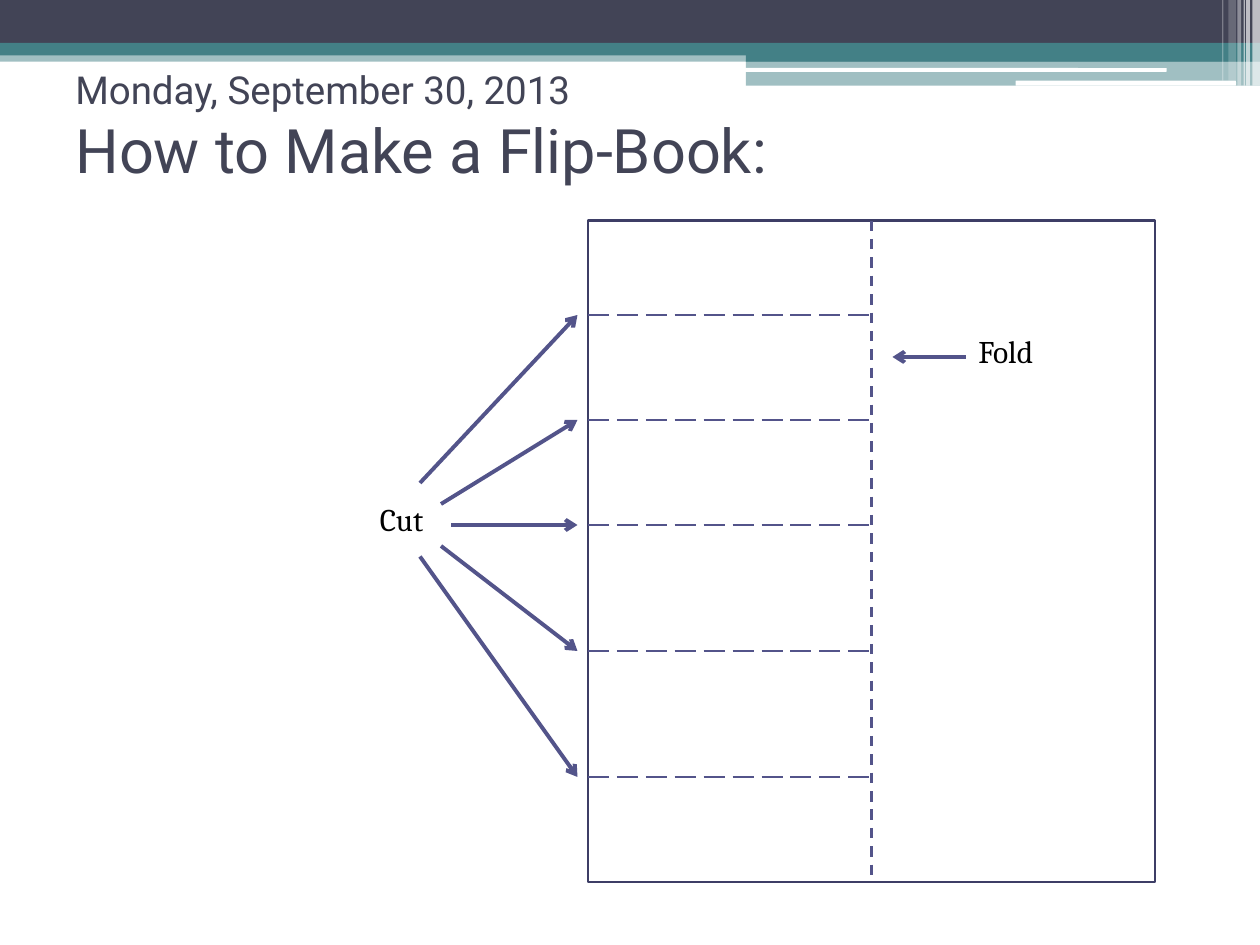
"""Build a slide that shows how to cut and fold a flip-book."""
from dataclasses import dataclass
from typing import Any, Optional

import pptx
import pptx.dml.color
import pptx.enum.dml
import pptx.enum.shapes
import pptx.enum.text
import pptx.oxml
import pptx.oxml.ns
import pptx.util
from lxml import etree

RGBColor = pptx.dml.color.RGBColor
Shape = pptx.enum.shapes.MSO_SHAPE
Dash = pptx.enum.dml.MSO_LINE
Anchor = pptx.enum.text.MSO_ANCHOR

WHITE = RGBColor(0xFF, 0xFF, 0xFF)
BLACK = RGBColor(0x00, 0x00, 0x00)
SLATE = RGBColor(0x42, 0x44, 0x56)
TEAL = RGBColor(0x43, 0x80, 0x86)
INDIGO = RGBColor(0x53, 0x54, 0x8A)
DARK_INDIGO = RGBColor(0x3D, 0x3E, 0x66)

SLIDE_WIDTH = pptx.util.Inches(10)
SLIDE_HEIGHT = pptx.util.Inches(7.5)
CELL = SLIDE_WIDTH // 120
PAGE_LEFT, PAGE_TOP, PAGE_RIGHT, PAGE_BOTTOM = 56, 21, 110, 84
FOLD_COLUMN = (PAGE_LEFT + PAGE_RIGHT) // 2
ARROW_END = PAGE_LEFT - 1


@dataclass(frozen=True)
class Band:
    """A header rectangle in inches, with its opacity in percent."""

    left: float
    top: float
    width: float
    height: float
    color: RGBColor
    opacity: int = 100
    preset: Any = Shape.RECTANGLE


@dataclass(frozen=True)
class Cut:
    """A cut row and the grid point where its arrow starts."""

    row: int
    start_column: int
    start_row: int


BANDS = (
    Band(0, 0.4, 10, 0.09, TEAL, 50),
    Band(0, 0, 10, 0.34, SLATE),
    Band(0, 0.34, 10, 0.1, TEAL),
    Band(5.92, 0.39, 4.08, 0.1, TEAL),
    Band(5.92, 0.48, 4.08, 0.2, TEAL, 50),
    Band(5.91, 0.54, 3.35, 0.03, WHITE, preset=Shape.ROUNDED_RECTANGLE),
    Band(8.06, 0.64, 1.75, 0.04, WHITE, preset=Shape.ROUNDED_RECTANGLE),
    Band(9.94, 0, 0.06, 0.68, WHITE, 65),
    Band(9.89, 0, 0.03, 0.68, WHITE, 65),
    Band(9.87, 0, 0.01, 0.68, WHITE, 60),
    Band(9.82, 0, 0.03, 0.68, WHITE, 40),
    Band(9.75, 0, 0.06, 0.64, WHITE, 20),
    Band(9.7, 0, 0.01, 0.64, WHITE, 30),
)
CUTS = (Cut(30, 40, 46), Cut(40, 42, 48), Cut(50, 43, 50), Cut(62, 42, 52), Cut(74, 40, 53))


def add_band(slide: Any, band: Band) -> None:
    """Draw one header band."""
    box = [pptx.util.Inches(value) for value in (band.left, band.top, band.width, band.height)]
    shape = slide.shapes.add_shape(band.preset, *box)
    shape.shadow.inherit = False
    shape.line.fill.background()
    shape.fill.solid()
    shape.fill.fore_color.rgb = band.color
    if band.opacity < 100:
        color = shape.fill._xPr.find(".//" + pptx.oxml.ns.qn("a:srgbClr"))
        etree.SubElement(color, pptx.oxml.ns.qn("a:alpha"), val=str(band.opacity * 1000))


def add_page(slide: Any) -> None:
    """Draw the sheet of paper."""
    shape = slide.shapes.add_shape(
        Shape.RECTANGLE, PAGE_LEFT * CELL, PAGE_TOP * CELL,
        (PAGE_RIGHT - PAGE_LEFT) * CELL, (PAGE_BOTTOM - PAGE_TOP) * CELL,
    )
    shape.shadow.inherit = False
    shape.fill.solid()
    shape.fill.fore_color.rgb = WHITE
    shape.line.color.rgb = DARK_INDIGO
    shape.line.width = pptx.util.Pt(1.5)


def add_line(slide: Any, start: tuple[int, int], end: tuple[int, int],
             dash: Optional[Any] = None) -> None:
    """Draw a dashed line between grid points, or an arrow if no dash is given."""
    points = [value * CELL for value in (*start, *end)]
    connector = slide.shapes.add_connector(pptx.enum.shapes.MSO_CONNECTOR.STRAIGHT, *points)
    connector.line.color.rgb = INDIGO
    connector.line.width = pptx.util.Pt(1.5 if dash else 2.25)
    if dash:
        connector.line.dash_style = dash
    else:
        line = connector.line._get_or_add_ln()
        etree.SubElement(line, pptx.oxml.ns.qn("a:tailEnd"), type="arrow")
    etree.SubElement(connector._element.spPr, pptx.oxml.ns.qn("a:effectLst"))


def add_text(slide: Any, *lines: tuple[str, float], left: float, top: float, width: float,
             height: float, font: str, color: RGBColor, anchor: Any = Anchor.TOP) -> None:
    """Write lines of (text, size) in a box given in grid cells."""
    box = [round(value * CELL) for value in (left, top, width, height)]
    frame = slide.shapes.add_textbox(*box).text_frame
    frame.word_wrap = True
    frame.vertical_anchor = anchor
    paragraph = frame.paragraphs[0]
    for index, (text, size) in enumerate(lines):
        if index:
            paragraph.add_line_break()
        run = paragraph.add_run()
        run.text = text
        run.font.name = font
        run.font.size = pptx.util.Pt(size)
        run.font.color.rgb = color


def main() -> None:
    """Build and save the slide."""
    presentation = pptx.Presentation()
    presentation.slide_width = SLIDE_WIDTH
    presentation.slide_height = SLIDE_HEIGHT
    slide = presentation.slides.add_slide(presentation.slide_layouts[6])
    for band in BANDS:
        add_band(slide, band)
    add_text(slide, ("Monday, September 30, 2013 ", 22), ("How to Make a Flip-Book:", 35),
             left=6, top=5, width=108, height=14, font="Roboto", color=SLATE,
             anchor=Anchor.MIDDLE)
    add_page(slide)
    add_line(slide, (FOLD_COLUMN, PAGE_TOP), (FOLD_COLUMN, PAGE_BOTTOM), Dash.DASH)
    add_line(slide, (92, 34), (85, 34))
    for label, column, row in (("Fold", 92, 31), ("Cut", 35, 47)):
        add_text(slide, (label, 18), left=column, top=row, width=11, height=4.8,
                 font="Cambria", color=BLACK)
    for cut in CUTS:
        add_line(slide, (PAGE_LEFT, cut.row), (FOLD_COLUMN, cut.row), Dash.LONG_DASH)
        add_line(slide, (cut.start_column, cut.start_row), (ARROW_END, cut.row))
    presentation.save("out.pptx")


if __name__ == "__main__":
    main()
